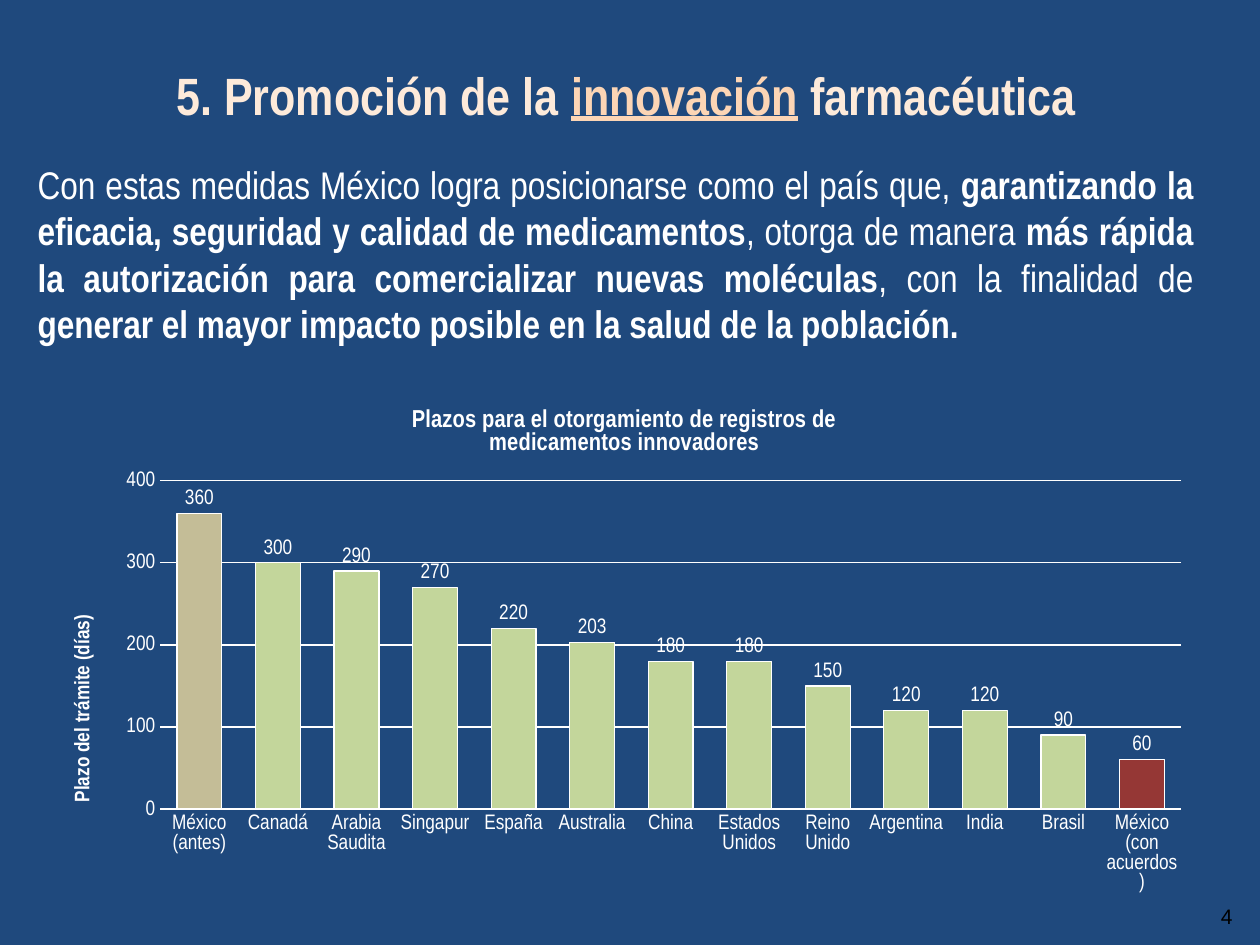
import dataclasses
import typing

import lxml.etree
import pptx
import pptx.chart.data
import pptx.dml.color
import pptx.enum.chart
import pptx.enum.text
import pptx.oxml
import pptx.oxml.ns
import pptx.util

NAVY = pptx.dml.color.RGBColor(0x1F, 0x49, 0x7D)
WHITE = pptx.dml.color.RGBColor(0xFF, 0xFF, 0xFF)
BLACK = pptx.dml.color.RGBColor(0x00, 0x00, 0x00)
CREAM = pptx.dml.color.RGBColor(0xFD, 0xEA, 0xDA)
PEACH = pptx.dml.color.RGBColor(0xFC, 0xD5, 0xB5)
GREEN = pptx.dml.color.RGBColor(0xC3, 0xD6, 0x9B)
TAN = pptx.dml.color.RGBColor(0xC4, 0xBD, 0x97)
RED = pptx.dml.color.RGBColor(0x95, 0x37, 0x35)
NARROW = "Arial Narrow"
WIDTH = pptx.util.Inches(10)
HEIGHT = pptx.util.Inches(7.5)
UPWARD = 270 * 60000
ALIGN = pptx.enum.text.PP_ALIGN


@dataclasses.dataclass(frozen=True)
class PercentArea:
    left: float
    top: float
    width: float
    height: float

    def lengths(self) -> tuple[int, int, int, int]:
        return (int(self.left * WIDTH / 100), int(self.top * HEIGHT / 100),
                int(self.width * WIDTH / 100), int(self.height * HEIGHT / 100))


@dataclasses.dataclass(frozen=True)
class Span:
    text: str
    bold: bool = False
    underline: bool = False
    color: typing.Optional[pptx.dml.color.RGBColor] = None


@dataclasses.dataclass(frozen=True)
class Term:
    country: str
    days: int
    color: pptx.dml.color.RGBColor = GREEN


TITLE = [
    Span("5. Promoción de la ", bold=True),
    Span("innovación", bold=True, underline=True, color=PEACH),
    Span(" farmacéutica", bold=True),
]
BODY = [
    Span("Con estas medidas México logra posicionarse como el país que, "),
    Span("garantizando la eficacia, seguridad y calidad de medicamentos", bold=True),
    Span(", otorga de manera "),
    Span("más rápida la autorización para comercializar nuevas moléculas", bold=True),
    Span(", con la finalidad de "),
    Span("generar el mayor impacto posible en la salud de la población.", bold=True),
]
TERMS = [
    Term("México (antes)", 360, TAN),
    Term("Canadá", 300),
    Term("Arabia Saudita", 290),
    Term("Singapur", 270),
    Term("España", 220),
    Term("Australia", 203),
    Term("China", 180),
    Term("Estados Unidos", 180),
    Term("Reino Unido", 150),
    Term("Argentina", 120),
    Term("India", 120),
    Term("Brasil", 90),
    Term("México (con acuerdos)", 60, RED),
]


def set_font(font, size: float, color, bold: bool = False, name: str = NARROW) -> None:
    font.name = name
    font.size = pptx.util.Pt(size)
    font.bold = bold
    font.color.rgb = color


def add_text(slide, area: PercentArea, spans: list[Span], *, size: float, color,
             align, name: str = NARROW, space_before: float = 0,
             anchor=pptx.enum.text.MSO_ANCHOR.TOP) -> None:
    frame = slide.shapes.add_textbox(*area.lengths()).text_frame
    frame.word_wrap = True
    frame.vertical_anchor = anchor
    paragraph = frame.paragraphs[0]
    paragraph.alignment = align
    paragraph.space_before = pptx.util.Pt(space_before)
    for span in spans:
        run = paragraph.add_run()
        run.text = span.text
        set_font(run.font, size, span.color or color, span.bold, name)
        run.font.underline = span.underline


def set_title(owner, lines: list[str], size: float) -> None:
    frame = owner.text_frame
    frame.text = "\n".join(lines)
    for paragraph in frame.paragraphs:
        set_font(paragraph.runs[0].font, size, WHITE, bold=True)


def set_layout(element, inner: bool = False, **shares: float) -> None:
    for layout in element.findall(pptx.oxml.ns.qn("c:layout")):
        element.remove(layout)
    layout = pptx.oxml.parse_xml(f"<c:layout {pptx.oxml.ns.nsdecls('c')}/>")
    manual = lxml.etree.SubElement(layout, pptx.oxml.ns.qn("c:manualLayout"))
    settings = {"layoutTarget": "inner"} if inner else {}
    settings |= {"xMode": "edge", "yMode": "edge"}
    for key, value in (settings | shares).items():
        lxml.etree.SubElement(manual, pptx.oxml.ns.qn(f"c:{key}")).set("val", str(value))
    text = element.find(pptx.oxml.ns.qn("c:tx"))
    element.insert(0 if text is None else 1, layout)


def set_line(line) -> None:
    line.color.rgb = WHITE
    line.width = pptx.util.Pt(0.75)


def add_terms_chart(slide, area: PercentArea, terms: list[Term]) -> None:
    data = pptx.chart.data.CategoryChartData()
    data.categories = [term.country for term in terms]
    data.add_series("Series 1", [term.days for term in terms])
    kind = pptx.enum.chart.XL_CHART_TYPE.COLUMN_CLUSTERED
    chart = slide.shapes.add_chart(kind, *area.lengths(), data).chart
    set_font(chart.font, 12, WHITE)
    chart.has_legend = False
    chart.has_title = True
    set_title(chart.chart_title, ["Plazos para el otorgamiento de registros de",
                                  "medicamentos innovadores"], 14)
    plot = chart.plots[0]
    plot.vary_by_categories = False
    plot.gap_width = 75
    plot.overlap = -25
    plot.has_data_labels = True
    labels = plot.data_labels
    labels.show_value = True
    labels.position = pptx.enum.chart.XL_LABEL_POSITION.OUTSIDE_END
    set_font(labels.font, 12, WHITE)
    series = plot.series[0]
    series.format.fill.solid()
    series.format.fill.fore_color.rgb = GREEN
    set_line(series.format.line)
    for index, term in enumerate(terms):
        if term.color != GREEN:
            column = series.points[index].format
            column.fill.solid()
            column.fill.fore_color.rgb = term.color
            set_line(column.line)
    countries, days = chart.category_axis, chart.value_axis
    for axis in (countries, days):
        axis.major_tick_mark = pptx.enum.chart.XL_TICK_MARK.NONE
        axis.minor_tick_mark = pptx.enum.chart.XL_TICK_MARK.NONE
        set_font(axis.tick_labels.font, 12, WHITE)
    set_line(countries.format.line)
    label_text = countries._element.find(pptx.oxml.ns.qn("c:txPr"))
    label_text.find(pptx.oxml.ns.qn("a:bodyPr")).set("rot", str(UPWARD))
    days.minimum_scale, days.maximum_scale, days.major_unit = 0, 400, 100
    days.format.line.fill.background()
    days.has_major_gridlines = True
    set_line(days.major_gridlines.format.line)
    days.has_title = True
    set_title(days.axis_title, ["Plazo del trámite (días)"], 12)
    set_layout(days.axis_title._element, x=0.02, y=0.4)
    set_layout(chart._chartSpace.chart.plotArea, inner=True, x=0.1, y=0.17, w=0.88, h=0.58)


def main() -> None:
    presentation = pptx.Presentation()
    presentation.slide_width = WIDTH
    presentation.slide_height = HEIGHT
    slide = presentation.slides.add_slide(presentation.slide_layouts[6])
    slide.background.fill.solid()
    slide.background.fill.fore_color.rgb = NAVY
    add_text(slide, PercentArea(2, 16.4, 93.7, 27.3), BODY, size=22, color=WHITE,
             align=ALIGN.JUSTIFY, space_before=4.4)
    add_text(slide, PercentArea(75.6, 94.3, 23.2, 5.2), [Span("4")], size=12, color=BLACK,
             align=ALIGN.RIGHT, name="Arial", anchor=pptx.enum.text.MSO_ANCHOR.MIDDLE)
    add_terms_chart(slide, PercentArea(3.5, 40.7, 92.1, 59.9), TERMS)
    add_text(slide, PercentArea(3.7, 6, 92, 8.1), TITLE, size=30, color=CREAM,
             align=ALIGN.CENTER)
    presentation.save("out.pptx")


if __name__ == "__main__":
    main()
